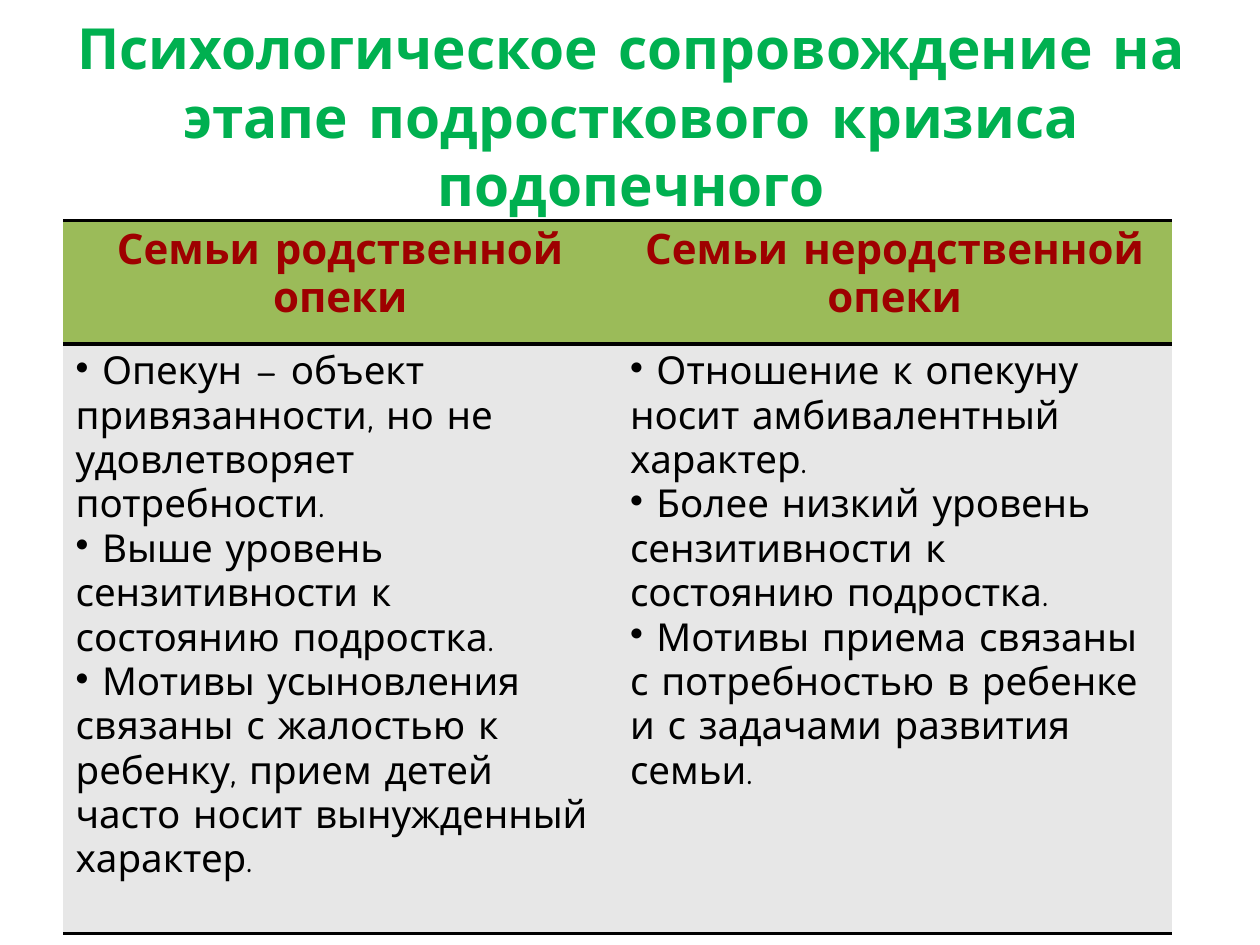
import pptx
import pptx.util
import pptx.dml.color
import pptx.enum.text
import pptx.oxml.ns
from lxml import etree

Inches, Pt = pptx.util.Inches, pptx.util.Pt
RGBColor = pptx.dml.color.RGBColor
PP_ALIGN = pptx.enum.text.PP_ALIGN
qn = pptx.oxml.ns.qn

TITLE = "Психологическое сопровождение на этапе подросткового кризиса подопечного"
COLUMNS = [
    ("Семьи родственной опеки", [
        " Опекун – объект привязанности, но не удовлетворяет потребности.",
        " Выше уровень сензитивности к состоянию подростка.",
        " Мотивы усыновления связаны с жалостью к ребенку, прием детей часто носит вынужденный характер.",
    ]),
    ("Семьи неродственной опеки", [
        " Отношение к опекуну носит амбивалентный характер.",
        " Более низкий уровень сензитивности к состоянию подростка.",
        " Мотивы приема связаны с потребностью в ребенке и с задачами развития семьи.",
    ]),
]
ROW_HEIGHTS = [0.98, 4.68]
COL_WIDTH = 4.4

FONT = "Comic Neue"
GREEN = RGBColor(0x00, 0xB0, 0x50)
RED = RGBColor(0x9E, 0x00, 0x00)
BLACK = RGBColor(0x00, 0x00, 0x00)
OLIVE = RGBColor(0x9B, 0xBB, 0x59)
GRAY = RGBColor(0xE7, 0xE7, 0xE7)

TITLE_FORMAT = {"name": FONT, "size": Pt(32.4), "bold": True}
HEAD_FORMAT = {"name": FONT, "size": Pt(24), "bold": True}
BODY_FORMAT = {"name": FONT, "size": Pt(22), "bold": False}


def write(tf, lines, fmt, color, align, bullet=None):
    tf.word_wrap = True
    for i, line in enumerate(lines):
        p = tf.paragraphs[0] if i == 0 else tf.add_paragraph()
        p.alignment = align
        if bullet:
            pPr = p._p.get_or_add_pPr()
            etree.SubElement(pPr, qn("a:buChar")).set("char", bullet)
        r = p.add_run()
        r.text = line
        for key, value in fmt.items():
            setattr(r.font, key, value)
        r.font.color.rgb = color


def set_borders(cell, ruled):
    tcPr = cell._tc.get_or_add_tcPr()
    for side in "LRTB":
        ln = etree.SubElement(tcPr, qn(f"a:ln{side}"))
        if side in ruled:
            ln.set("w", str(Pt(2)))
            fill = etree.SubElement(ln, qn("a:solidFill"))
            etree.SubElement(fill, qn("a:srgbClr")).set("val", str(BLACK))
        else:
            ln.set("w", "0")
            etree.SubElement(ln, qn("a:noFill"))


def fill_cell(cell, color):
    set_borders(cell, "TB")
    cell.fill.solid()
    cell.fill.fore_color.rgb = color


prs = pptx.Presentation()
prs.slide_width, prs.slide_height = Inches(10), Inches(7.5)
s = prs.slides.add_slide(prs.slide_layouts[6])

sp = s.shapes.add_textbox(Inches(0.51), Inches(0.29), Inches(9), Inches(1.25))
sp.text_frame.vertical_anchor = pptx.enum.text.MSO_ANCHOR.MIDDLE
write(sp.text_frame, [TITLE], TITLE_FORMAT, GREEN, PP_ALIGN.CENTER)

table = s.shapes.add_table(
    len(ROW_HEIGHTS), len(COLUMNS), Inches(0.5), Inches(1.75),
    Inches(COL_WIDTH * len(COLUMNS)), Inches(sum(ROW_HEIGHTS))).table
for row, height in zip(table.rows, ROW_HEIGHTS):
    row.height = Inches(height)
for c, (heading, points) in enumerate(COLUMNS):
    table.columns[c].width = Inches(COL_WIDTH)
    head, body = table.cell(0, c), table.cell(1, c)
    fill_cell(head, OLIVE)
    fill_cell(body, GRAY)
    write(head.text_frame, [heading], HEAD_FORMAT, RED, PP_ALIGN.CENTER)
    write(body.text_frame, points, BODY_FORMAT, BLACK, PP_ALIGN.LEFT, "•")

prs.save("out.pptx")
